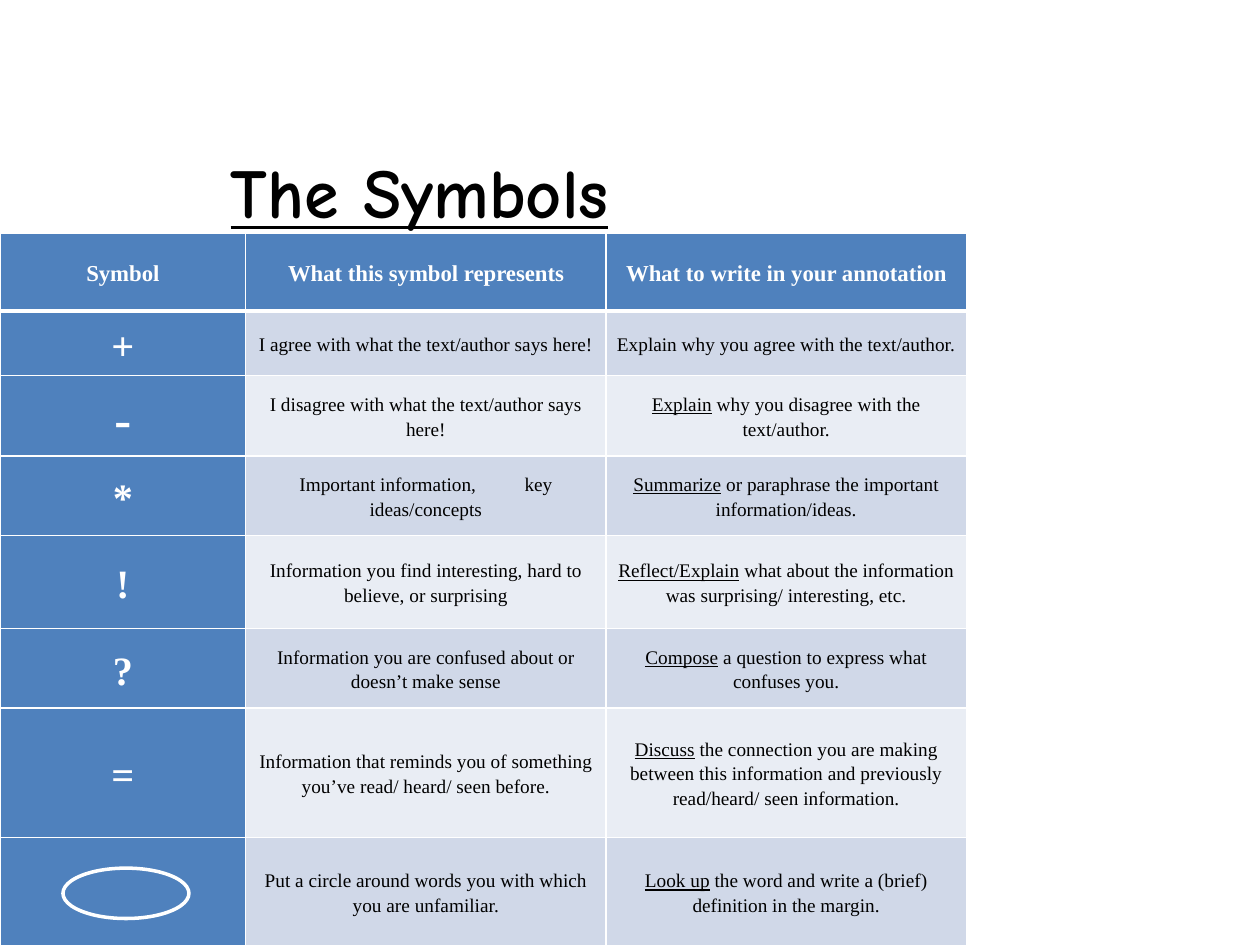
from dataclasses import dataclass

from lxml import etree
from pptx import Presentation
from pptx.dml.color import RGBColor
from pptx.enum.shapes import MSO_SHAPE
from pptx.enum.text import MSO_ANCHOR, PP_ALIGN
from pptx.oxml.ns import qn
from pptx.util import Pt

CENTER = PP_ALIGN.CENTER
MIDDLE = MSO_ANCHOR.MIDDLE
OVAL = MSO_SHAPE.OVAL

BLUE, WHITE, BLACK = "4F81BD", "FFFFFF", "000000"
BANDS = ("D0D8E8", "E9EDF4")
TABLE_FONT, TITLE_FONT = "Times New Roman", "Comic Neue"
COLUMN_WIDTHS = (140.4, 205.92, 205.92)
HEADER_HEIGHT = 44.64
HEADINGS = (
    "Symbol",
    "What this symbol represents",
    "What to write in your annotation",
)


@dataclass(frozen=True)
class Piece:
    text: str
    underline: bool = False
    spacing: float = 0


@dataclass(frozen=True)
class SymbolRow:
    height: float
    symbol: str
    meaning: tuple[Piece, ...]
    action: tuple[Piece, ...]
    symbol_size: float = 23


def verb_first(verb: str, rest: str) -> tuple[Piece, ...]:
    """Underline the instruction verb that opens a sentence."""
    return Piece(verb, underline=True), Piece(rest)


ROWS = (
    SymbolRow(36.72, "+",
              (Piece("I agree with what the text/author says here!"),),
              (Piece("Explain why you agree with the text/author."),)),
    SymbolRow(46.08, "-",
              (Piece("I disagree with what the text/author says here!"),),
              verb_first("Explain", " why you disagree with the text/author."),
              symbol_size=29),
    SymbolRow(45.36, "*",
              (Piece("Important information,"), Piece(" ", spacing=24.75),
               Piece("key ideas/concepts")),
              verb_first("Summarize", " or paraphrase the important information/ideas.")),
    SymbolRow(53.28, "!",
              (Piece("Information you find interesting, hard to believe, or surprising"),),
              verb_first("Reflect/Explain",
                         " what about the information was surprising/ interesting, etc.")),
    SymbolRow(45.36, "?",
              (Piece("Information you are confused about or doesn’t make sense"),),
              verb_first("Compose", " a question to express what confuses you.")),
    SymbolRow(74.16, "=",
              (Piece("Information that reminds you of something you’ve read/ heard/ "
                     "seen before."),),
              verb_first("Discuss",
                         " the connection you are making between this information "
                         "and previously read/heard/ seen information.")),
    SymbolRow(61.92, "",
              (Piece("Put a circle around words you with which you are unfamiliar."),),
              verb_first("Look up",
                         " the word and write a (brief) definition in the margin.")),
)


def rgb(color: str) -> RGBColor:
    return RGBColor.from_string(color)


def set_font(font, name: str, size: float, color: str, bold: bool) -> None:
    font.name = name
    font.size = Pt(size)
    font.bold = bold
    font.color.rgb = rgb(color)


def add_border(cell, side: str, width: float) -> None:
    properties = cell._tc.get_or_add_tcPr()
    line = etree.SubElement(properties, qn(f"a:ln{side}"), w=str(Pt(width)))
    fill = etree.SubElement(line, qn("a:solidFill"))
    etree.SubElement(fill, qn("a:srgbClr"), val=WHITE)


def fill_cell(cell, pieces: tuple[Piece, ...], fill: str, size: float,
              color: str, bold: bool, top: float = 1, bottom: float = 1) -> None:
    for side, width in (("L", 1), ("R", 1), ("T", top), ("B", bottom)):
        add_border(cell, side, width)
    cell.fill.solid()
    cell.fill.fore_color.rgb = rgb(fill)
    cell.vertical_anchor = MIDDLE
    cell.margin_left = cell.margin_right = Pt(4.5)
    cell.margin_top = cell.margin_bottom = Pt(0)
    paragraph = cell.text_frame.paragraphs[0]
    paragraph.alignment = CENTER
    paragraph.line_spacing = 1.15
    for piece in pieces:
        run = paragraph.add_run()
        run.text = piece.text
        set_font(run.font, TABLE_FONT, size, color, bold)
        run.font.underline = piece.underline
        if piece.spacing:
            run._r.get_or_add_rPr().set("spc", str(round(piece.spacing * 100)))


def add_title(slide) -> None:
    box = slide.shapes.add_textbox(Pt(23.76), Pt(77.76), Pt(432), Pt(62.64))
    text_frame = box.text_frame
    text_frame.word_wrap = True
    text_frame.vertical_anchor = MIDDLE
    text_frame.text = "The Symbols"
    paragraph = text_frame.paragraphs[0]
    paragraph.alignment = CENTER
    font = paragraph.runs[0].font
    set_font(font, TITLE_FONT, 40, BLACK, True)
    font.underline = True


def add_symbol_table(slide) -> None:
    heights = (HEADER_HEIGHT, *(row.height for row in ROWS))
    table = slide.shapes.add_table(
        len(heights), len(COLUMN_WIDTHS), Pt(0), Pt(133.2),
        Pt(sum(COLUMN_WIDTHS)), Pt(sum(heights))).table
    for column, width in zip(table.columns, COLUMN_WIDTHS):
        column.width = Pt(width)
    for table_row, height in zip(table.rows, heights):
        table_row.height = Pt(height)
    for index, heading in enumerate(HEADINGS):
        fill_cell(table.cell(0, index), (Piece(heading),), BLUE, 13, WHITE, True, bottom=3)
    for number, row in enumerate(ROWS, start=1):
        top = 3 if number == 1 else 1
        symbol = (Piece(row.symbol),) if row.symbol else ()
        fill_cell(table.cell(number, 0), symbol, BLUE, row.symbol_size, WHITE, True, top)
        band = BANDS[(number - 1) % 2]
        for index, pieces in enumerate((row.meaning, row.action), start=1):
            fill_cell(table.cell(number, index), pieces, band, 11, BLACK, False, top)


def add_circle_symbol(slide) -> None:
    ellipse = slide.shapes.add_shape(OVAL, Pt(36), Pt(496.08), Pt(72), Pt(28.8))
    ellipse.shadow.inherit = False
    ellipse.fill.solid()
    ellipse.fill.fore_color.rgb = rgb(BLUE)
    ellipse.line.color.rgb = rgb(WHITE)
    ellipse.line.width = Pt(2)


def main() -> None:
    presentation = Presentation()
    presentation.slide_width = Pt(720)
    presentation.slide_height = Pt(540)
    slide = presentation.slides.add_slide(presentation.slide_layouts[6])
    add_title(slide)
    add_symbol_table(slide)
    add_circle_symbol(slide)
    presentation.save("out.pptx")


if __name__ == "__main__":
    main()
